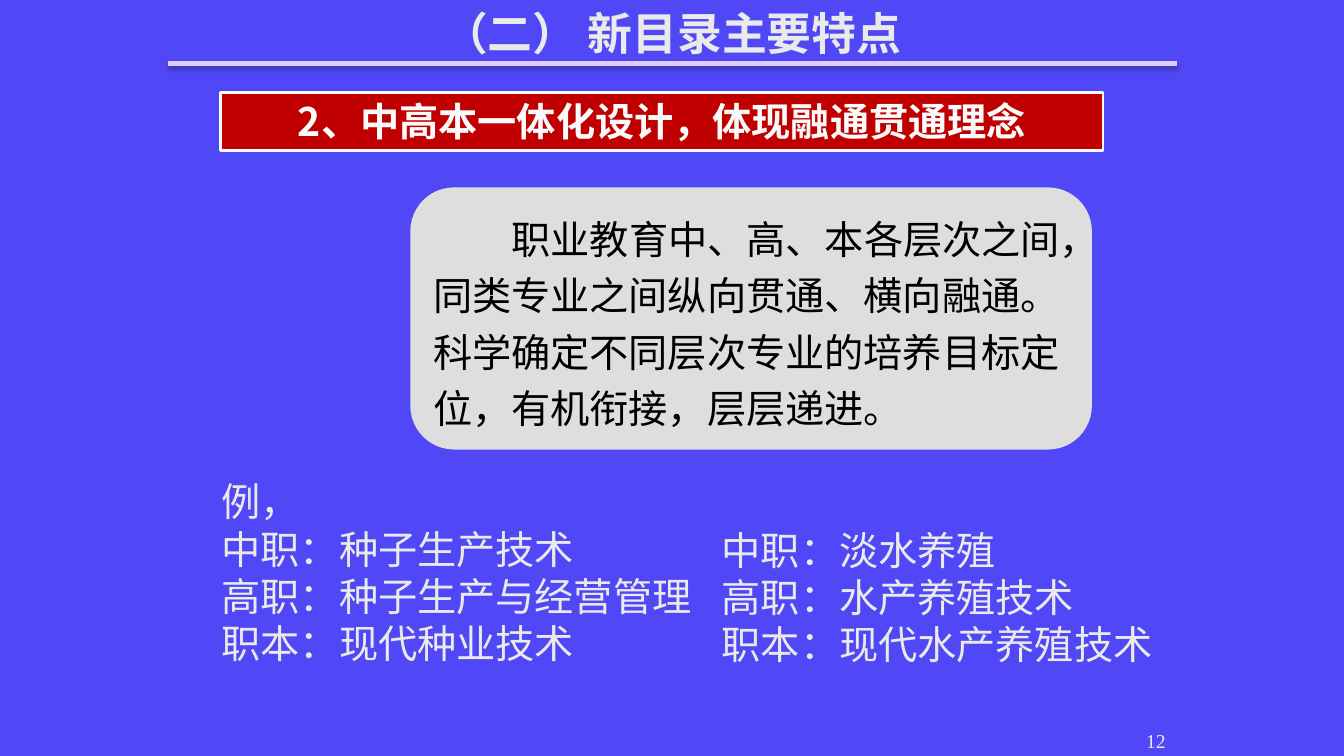
from dataclasses import dataclass
from typing import Optional

from lxml.etree import SubElement
from pptx import Presentation
from pptx.dml.color import RGBColor
from pptx.enum.shapes import MSO_CONNECTOR as Link, MSO_SHAPE as Form
from pptx.enum.text import MSO_ANCHOR as Anchor, MSO_AUTO_SIZE as Fit, PP_ALIGN as Align
from pptx.oxml.ns import qn
from pptx.util import Inches, Pt

SANS, SERIF = "Noto Sans CJK SC", "Times New Roman"
PALE, WHITE = "EAEAEA", "F9FBFA"


@dataclass
class Block:
    """A text block, with or without a filled shape behind it."""
    box: tuple[float, float, float, float]
    lines: list[str]
    size: int = 28
    font: str = SANS
    color: str = PALE
    bold: bool = False
    align: Align = Align.LEFT
    anchor: Anchor = Anchor.TOP
    grow: bool = False
    foot: float = 0.05
    form: Optional[Form] = None
    fill: str = ""
    edge: str = ""
    indent: float = 0
    lead: float = 1
    before: int = 0


def rgb(code: str) -> RGBColor:
    return RGBColor.from_string(code)


def add_block(slide, block: Block) -> None:
    box = [Inches(v) for v in block.box]
    if block.form is None:
        shape = slide.shapes.add_textbox(*box)
    else:
        shape = slide.shapes.add_shape(block.form, *box)
        shape.shadow.inherit = False
        shape.fill.solid()
        shape.fill.fore_color.rgb = rgb(block.fill)
        if block.edge:
            shape.line.color.rgb = rgb(block.edge)
            shape.line.width = Pt(2)
        else:
            shape.line.fill.background()
    frame = shape.text_frame
    frame.word_wrap = True
    frame.auto_size = Fit.SHAPE_TO_FIT_TEXT if block.grow else Fit.NONE
    frame.vertical_anchor = block.anchor
    frame.margin_bottom = Inches(block.foot)
    for i, text in enumerate(block.lines):
        para = frame.add_paragraph() if i else frame.paragraphs[0]
        add_line(para, text, block)


def add_line(para, text: str, block: Block) -> None:
    para.alignment = block.align
    para.line_spacing = block.lead
    para.space_before = Pt(block.before)
    if block.indent:
        props = para._p.get_or_add_pPr()
        props.set("marL", "0")
        props.set("indent", str(Inches(block.indent)))
    run = para.add_run()
    run.text = text
    font = run.font
    font.size, font.bold, font.name = Pt(block.size), block.bold, block.font
    font.color.rgb = rgb(block.color)
    # East Asian glyphs take their own typeface
    SubElement(run._r.get_or_add_rPr(), qn("a:ea"), typeface=block.font)


def add_rule(slide, left: float, right: float, top: float) -> None:
    rule = slide.shapes.add_connector(
        Link.STRAIGHT, Inches(left), Inches(top), Inches(right), Inches(top))
    rule.line.color.rgb = rgb("E0CCFF")
    rule.line.width = Pt(3)
    # Soft shadow straight below
    glow = SubElement(rule._element.spPr, qn("a:effectLst"))
    shade = SubElement(glow, qn("a:outerShdw"), blurRad=str(Pt(3.1)),
                       dist=str(Pt(1.8)), dir="5400000", rotWithShape="0")
    tint = SubElement(shade, qn("a:srgbClr"), val="000000")
    SubElement(tint, qn("a:alpha"), val="35000")


TITLE = Block((1.67, -0.18, 10, 1), ["（二） 新目录主要特点"], size=32, bold=True,
              align=Align.CENTER, anchor=Anchor.MIDDLE)
BLOCKS = [
    # Page number
    Block((9.58, 7.06, 2.08, 0.5), ["12"], size=14, font=SERIF,
          align=Align.RIGHT, anchor=Anchor.BOTTOM, foot=0.09),
    # Red heading
    Block((2.19, 0.92, 8.75, 0.57), ["2、中高本一体化设计，体现融通贯通理念"],
          color=WHITE, bold=True, align=Align.CENTER, grow=True,
          form=Form.RECTANGLE, fill="C00000", edge=WHITE),
    # Grey panel
    Block((4.07, 1.86, 6.76, 2.6),
          ["职业教育中、高、本各层次之间，同类专业之间纵向贯通、横向融通。"
           "科学确定不同层次专业的培养目标定位，有机衔接，层层递进。"],
          color="000000", anchor=Anchor.MIDDLE, form=Form.ROUNDED_RECTANGLE,
          fill="DEDEDE", indent=0.78, lead=1.2, before=6),
    # Two examples
    Block((2.1, 4.69, 6.46, 1.98),
          ["例，", "中职：种子生产技术", "高职：种子生产与经营管理", "职本：现代种业技术"],
          grow=True),
    Block((7.06, 5.17, 4.61, 1.51),
          ["中职：淡水养殖", "高职：水产养殖技术", "职本：现代水产养殖技术"], grow=True),
]


def main() -> None:
    deck = Presentation()
    deck.slide_width, deck.slide_height = Inches(13.33), Inches(7.5)
    slide = deck.slides.add_slide(deck.slide_layouts[6])
    back = slide.background.fill
    back.solid()
    back.fore_color.rgb = rgb("5048F6")
    add_block(slide, TITLE)
    add_rule(slide, 1.67, 11.67, 0.63)
    for block in BLOCKS:
        add_block(slide, block)
    deck.save("out.pptx")


if __name__ == "__main__":
    main()
